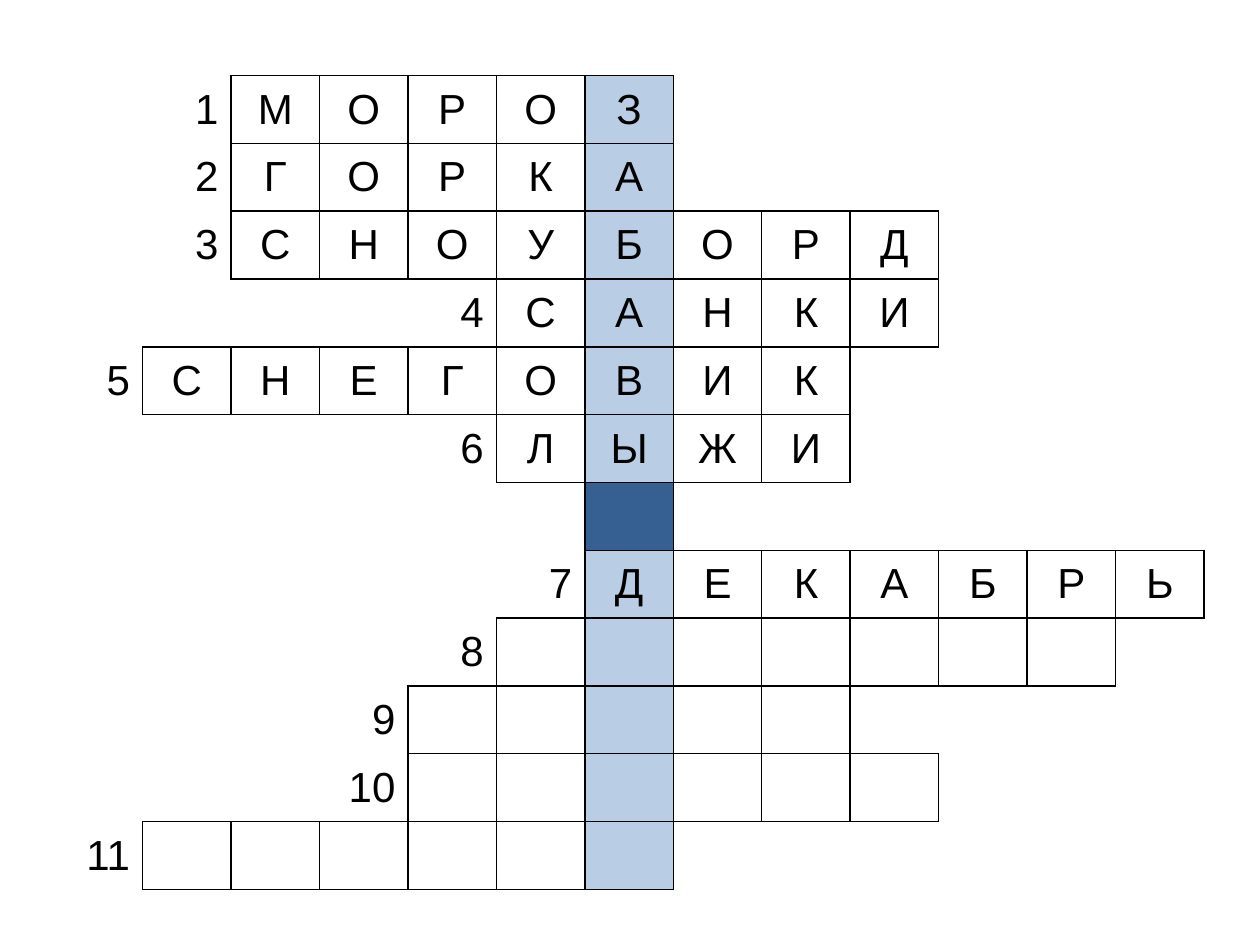
"""Build a winter crossword slide as one table with framed word cells."""
from typing import NamedTuple

from lxml.etree import SubElement
from pptx import Presentation
from pptx.dml.color import RGBColor
from pptx.enum.text import MSO_ANCHOR, PP_ALIGN
from pptx.oxml.ns import qn
from pptx.table import _Cell
from pptx.util import Inches, Pt

BLACK = RGBColor(0x00, 0x00, 0x00)
KEYWORD_BLUE = RGBColor(0xB9, 0xCD, 0xE5)
GAP_BLUE = RGBColor(0x37, 0x60, 0x92)
COLUMNS = 13
KEYWORD_COLUMN = 6
EDGES = {"a:lnL": (0, -1), "a:lnR": (0, 1), "a:lnT": (-1, 0), "a:lnB": (1, 0)}


class Word(NamedTuple):
    number: str
    start: int
    length: int
    letters: str = ""


WORDS = [
    Word("1", 2, 5, "МОРОЗ"),
    Word("2", 2, 5, "ГОРКА"),
    Word("3", 2, 8, "СНОУБОРД"),
    Word("4", 5, 5, "САНКИ"),
    Word("5", 1, 8, "СНЕГОВИК"),
    Word("6", 5, 4, "ЛЫЖИ"),
    Word("", KEYWORD_COLUMN, 1),
    Word("7", 6, 7, "ДЕКАБРЬ"),
    Word("8", 5, 7),
    Word("9", 4, 5),
    Word("10", 4, 6),
    Word("11", 1, 6),
]


def is_framed(row: int, column: int) -> bool:
    if not 0 <= row < len(WORDS):
        return False
    word = WORDS[row]
    return word.start <= column < word.start + word.length


def draw_borders(cell: _Cell, row: int, column: int) -> None:
    properties = cell._tc.get_or_add_tcPr()
    for tag, (down, right) in EDGES.items():
        line = SubElement(properties, qn(tag), w=str(Pt(1)))
        if is_framed(row, column) or is_framed(row + down, column + right):
            fill = SubElement(line, qn("a:solidFill"))
            SubElement(fill, qn("a:srgbClr"), val=str(BLACK))
        else:
            SubElement(line, qn("a:noFill"))


def fill_cell(cell: _Cell, row: int, column: int) -> None:
    if column == KEYWORD_COLUMN:
        cell.fill.solid()
        cell.fill.fore_color.rgb = KEYWORD_BLUE if WORDS[row].number else GAP_BLUE
    else:
        cell.fill.background()


def write_text(cell: _Cell, text: str, alignment: PP_ALIGN) -> None:
    cell.vertical_anchor = MSO_ANCHOR.MIDDLE
    paragraph = cell.text_frame.paragraphs[0]
    paragraph.alignment = alignment
    run = paragraph.add_run()
    run.text = text
    run.font.name = "Arial"
    run.font.size = Pt(24)
    run.font.color.rgb = BLACK


def main() -> None:
    presentation = Presentation()
    presentation.slide_width = Inches(10)
    presentation.slide_height = Inches(7.5)
    slide = presentation.slides.add_slide(presentation.slide_layouts[6])
    crossword = slide.shapes.add_table(
        len(WORDS), COLUMNS, Inches(0.43), Inches(0.6), Inches(9.13), Inches(6.46)
    ).table
    crossword.first_row = False
    crossword.horz_banding = False

    for row, word in enumerate(WORDS):
        for column in range(COLUMNS):
            cell = crossword.cell(row, column)
            draw_borders(cell, row, column)
            fill_cell(cell, row, column)
        if word.number:
            write_text(crossword.cell(row, word.start - 1), word.number, PP_ALIGN.RIGHT)
        for column, letter in enumerate(word.letters, word.start):
            write_text(crossword.cell(row, column), letter, PP_ALIGN.CENTER)

    presentation.save("out.pptx")


if __name__ == "__main__":
    main()
